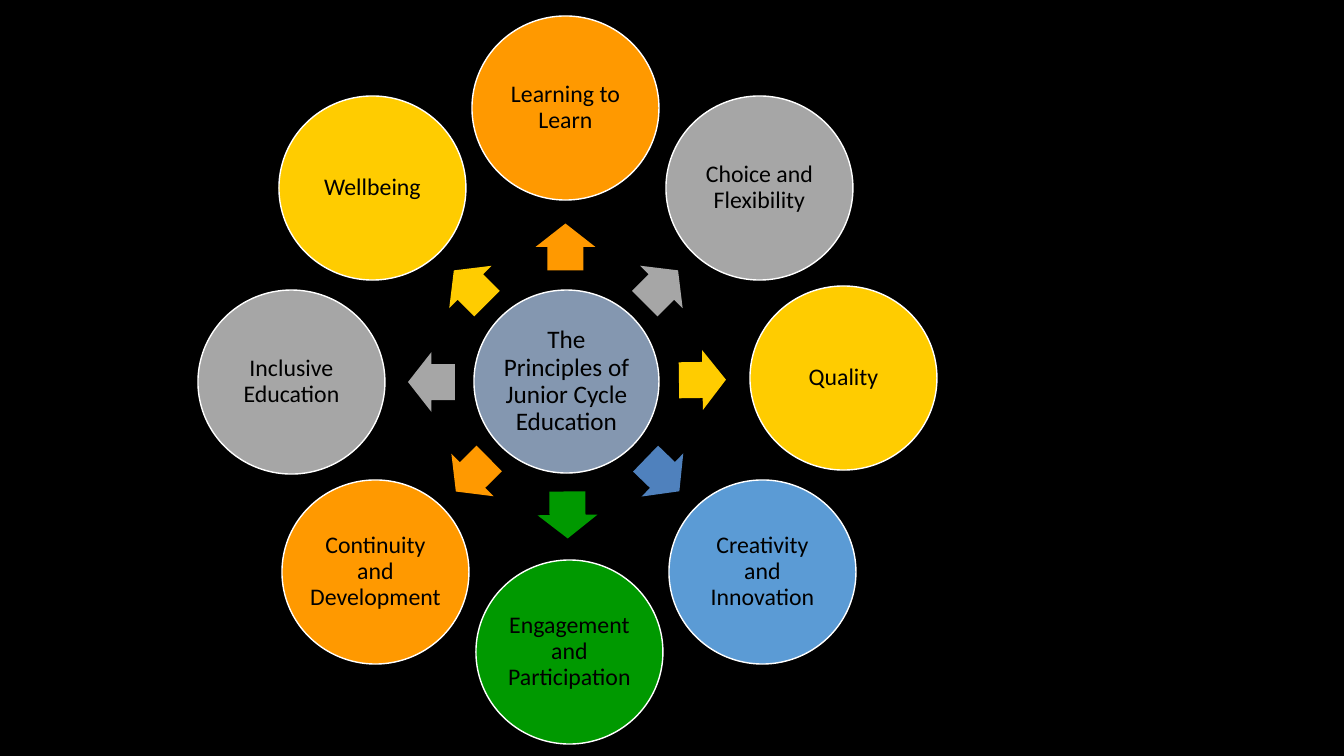
import math
import pptx
import pptx.util
import pptx.dml.color
import pptx.enum.shapes
import pptx.enum.text

SHAPES = pptx.enum.shapes.MSO_SHAPE
SCALE = 914400 / 100.8
HUB = (566, 382)
RING = 274
GAP = 135
SHIFT = (3, -4)
ITEMS = [
    ("Learning to Learn", "FF9900", "FF9900", False),
    ("Choice and Flexibility", "A6A6A6", "A6A6A6", False),
    ("Quality", "FFCC00", "FFCC00", True),
    ("Creativity and Innovation", "5B9BD5", "4F81BD", True),
    ("Engagement and Participation", "009900", "009900", True),
    ("Continuity and Development", "FF9900", "FF9900", True),
    ("Inclusive Education", "A6A6A6", "A6A6A6", False),
    ("Wellbeing", "FFCC00", "FFCC00", False),
]


def px(count):
    return pptx.util.Emu(round(count * SCALE))


def color(code):
    return pptx.dml.color.RGBColor.from_string(code)


class Wheel:
    font = "Calibri"
    ink = "000000"
    edge = "FFFFFF"

    def __init__(self, slide):
        self.slide = slide

    def ground(self, code):
        fill = self.slide.background.fill
        fill.solid()
        fill.fore_color.rgb = color(code)

    def shape(self, kind, mid, size, code):
        left, top = (round(m - s / 2) for m, s in zip(mid, size))
        item = self.slide.shapes.add_shape(kind, px(left), px(top), px(size[0]), px(size[1]))
        item.shadow.inherit = False
        item.fill.solid()
        item.fill.fore_color.rgb = color(code)
        return item

    def disc(self, mid, size, code, text, points):
        item = self.shape(SHAPES.OVAL, mid, size, code)
        item.line.color.rgb = color(self.edge)
        item.line.width = pptx.util.Pt(1)
        frame = item.text_frame
        frame.word_wrap = True
        frame.vertical_anchor = pptx.enum.text.MSO_ANCHOR.MIDDLE
        frame.margin_left = frame.margin_right = 0
        frame.margin_top = frame.margin_bottom = 0
        line = frame.paragraphs[0]
        line.text = text
        line.alignment = pptx.enum.text.PP_ALIGN.CENTER
        line.line_spacing = 0.9
        line.font.name = self.font
        line.font.size = pptx.util.Pt(points)
        line.font.color.rgb = color(self.ink)

    def arrow(self, mid, size, code, angle):
        item = self.shape(SHAPES.RIGHT_ARROW, mid, size, code)
        item.line.fill.background()
        item.adjustments[0] = 0.6
        item.adjustments[1] = 0.5
        item.rotation = round(angle, 1) % 360


def main():
    deck = pptx.Presentation()
    deck.slide_width, deck.slide_height = px(1344), px(756)
    wheel = Wheel(deck.slides.add_slide(deck.slide_layouts[6]))
    wheel.ground("000000")
    wheel.disc(HUB, (185, 183), "8497B0", "The Principles of Junior Cycle Education", 18)

    for index, (text, code, tint, moved) in enumerate(ITEMS):
        turn = math.radians(index * 360 / len(ITEMS) - 90)
        move = SHIFT if moved else (0, 0)
        across = RING * math.cos(turn) + move[0]
        down = RING * math.sin(turn) + move[1]
        part = GAP / RING
        wheel.arrow((HUB[0] + across * part, HUB[1] + down * part), (47, 60), tint,
                    math.degrees(math.atan2(down, across)))
        wheel.disc((HUB[0] + across, HUB[1] + down), (187, 184), code, text, 17)

    deck.save("out.pptx")


if __name__ == "__main__":
    main()
